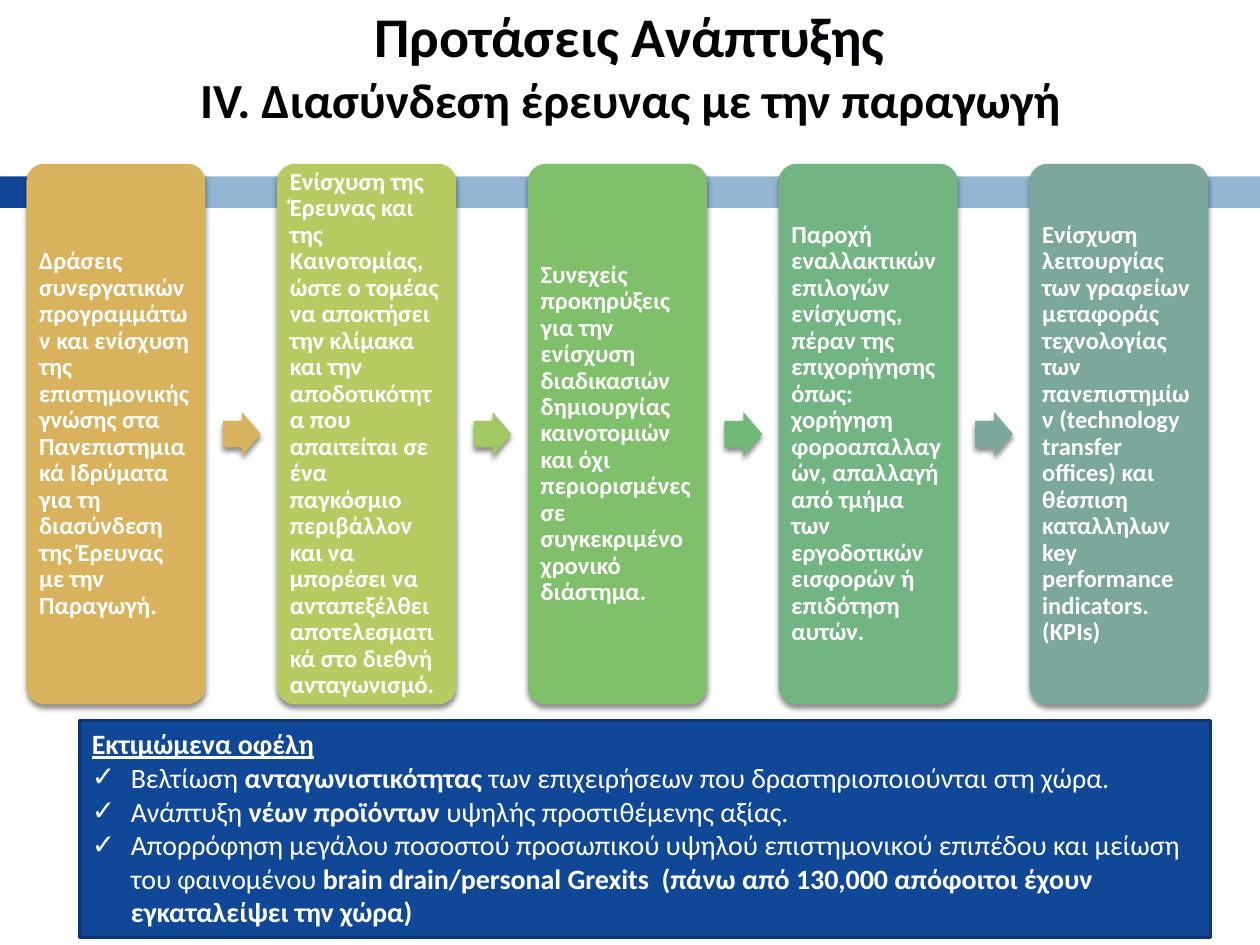
from lxml.etree import SubElement
from pptx import Presentation
from pptx.dml.color import RGBColor
from pptx.enum.shapes import MSO_SHAPE
from pptx.enum.text import MSO_ANCHOR, PP_ALIGN
from pptx.oxml.ns import qn
from pptx.util import Inches, Pt

hues = {
    "navy": "114797", "edge": "0D3570", "sky": "94B6D2",
    "ink": "000104", "white": "FFFFFF", "shade": "000000",
}

cards = [
    ("D8B25C", "D8B25C", "Δράσεις συνεργατικών προγραμμάτων και ενίσχυση της επιστημονικής γνώσης στα Πανεπιστημιακά Ιδρύματα για τη διασύνδεση της Έρευνας με την Παραγωγή."),
    ("B6CC63", "A2C866", "Ενίσχυση της Έρευνας και της Καινοτομίας, ώστε ο τομέας να αποκτήσει την κλίμακα και την αποδοτικότητα που απαιτείται σε ένα παγκόσμιο περιβάλλον και να μπορέσει να ανταπεξέλθει αποτελεσματικά στο διεθνή ανταγωνισμό."),
    ("81C06B", "70B876", "Συνεχείς προκηρύξεις για την ενίσχυση διαδικασιών δημιουργίας καινοτομιών και όχι περιορισμένες σε συγκεκριμένο χρονικό διάστημα."),
    ("73B483", "7BA79D", "Παροχή εναλλακτικών επιλογών ενίσχυσης, πέραν της επιχορήγησης όπως: χορήγηση φοροαπαλλαγών, απαλλαγή από τμήμα των εργοδοτικών εισφορών ή επιδότηση αυτών."),
    ("7BA79D", None, "Ενίσχυση λειτουργίας των γραφείων μεταφοράς τεχνολογίας των πανεπιστημίων (technology transfer offices) και θέσπιση καταλληλων key performance indicators. (KPIs)"),
]

gains = [
    [("Βελτίωση ", False), ("ανταγωνιστικότητας ", True),
     ("των επιχειρήσεων που δραστηριοποιούνται στη χώρα.", False)],
    [("Ανάπτυξη ", False), ("νέων προϊόντων ", True),
     ("υψηλής προστιθέμενης αξίας.", False)],
    [("Απορρόφηση μεγάλου ποσοστού προσωπικού υψηλού επιστημονικού επιπέδου και μείωση του φαινομένου ", False),
     ("brain drain/personal Grexits  (πάνω από 130,000 απόφοιτοι έχουν εγκαταλείψει την χώρα)", True)],
]


def write(para, text, size, hue, **extra):
    run = para.add_run()
    run.text = text
    run.font.color.rgb = RGBColor.from_string(hue)
    for key, val in {"name": "Calibri", "size": Pt(size), "bold": True, **extra}.items():
        setattr(run.font, key, val)


def draw(kind, box, hue, adj=(), shade=False):
    shape = slide.shapes.add_shape(kind, *map(Inches, box))
    shape.fill.solid()
    shape.fill.fore_color.rgb = RGBColor.from_string(hue)
    shape.line.fill.background()
    shape.shadow.inherit = False
    for i, val in enumerate(adj):
        shape.adjustments[i] = val
    if shade:
        glow = SubElement(shape._element.spPr.find(qn("a:effectLst")), qn("a:outerShdw"),
                          blurRad=str(Pt(3)), dist=str(Pt(2.4)), dir="5400000", rotWithShape="0")
        tone = SubElement(glow, qn("a:srgbClr"), val=hues["shade"])
        SubElement(tone, qn("a:alpha"), val="45000")
    return shape


deck = Presentation()
deck.slide_width, deck.slide_height = Inches(10), Inches(7.5)
slide = deck.slides.add_slide(deck.slide_layouts[5])

draw(MSO_SHAPE.RECTANGLE, (0, 1.4, 0.58, 0.25), hues["navy"])
draw(MSO_SHAPE.RECTANGLE, (0.65, 1.4, 9.35, 0.25), hues["sky"])

title = slide.shapes.title
for key, val in {"left": 0.5, "top": 0.21, "width": 9, "height": 0.61}.items():
    setattr(title, key, Inches(val))
title.text_frame.vertical_anchor = MSO_ANCHOR.MIDDLE
para = title.text_frame.paragraphs[0]
para.alignment = PP_ALIGN.CENTER
write(para, "Προτάσεις Ανάπτυξης", 32, hues["ink"])
para.add_line_break()
write(para, "IV. Διασύνδεση έρευνας με την παραγωγή", 28, hues["ink"])

for i, (hue, next_hue, text) in enumerate(cards):
    left = 0.21 + 1.99 * i
    card = draw(MSO_SHAPE.ROUNDED_RECTANGLE, (left, 1.3, 1.42, 4.29), hue, [0.1], True)
    frame = card.text_frame
    for side in ("left", "right", "top", "bottom"):
        setattr(frame, "margin_" + side, Inches(0.06))
    frame.word_wrap = True
    frame.vertical_anchor = MSO_ANCHOR.MIDDLE
    para = frame.paragraphs[0]
    para.alignment = PP_ALIGN.LEFT
    para.line_spacing = 0.9
    write(para, text, 14, hues["white"])
    if next_hue:
        draw(MSO_SHAPE.RIGHT_ARROW, (left + 1.56, 3.27, 0.3, 0.35), next_hue, [0.6, 0.5], True)

panel = draw(MSO_SHAPE.RECTANGLE, (0.63, 5.72, 8.98, 1.72), hues["navy"])
panel.line.color.rgb = RGBColor.from_string(hues["edge"])
panel.line.width = Pt(1.5)
frame = panel.text_frame
frame.word_wrap = True
frame.vertical_anchor = MSO_ANCHOR.TOP
para = frame.paragraphs[0]
para.alignment = PP_ALIGN.LEFT
write(para, "Εκτιμώμενα οφέλη", 16, hues["white"], underline=True)
for gain in gains:
    para = frame.add_paragraph()
    para.alignment = PP_ALIGN.LEFT
    props = para._p.get_or_add_pPr()
    props.set("marL", str(Inches(0.31)))
    props.set("indent", str(Inches(-0.31)))
    SubElement(props, qn("a:buFont"), typeface="Calibri")
    SubElement(props, qn("a:buChar"), char="✓")
    for text, bold in gain:
        write(para, text, 16, hues["white"], bold=bold)

deck.save("out.pptx")
